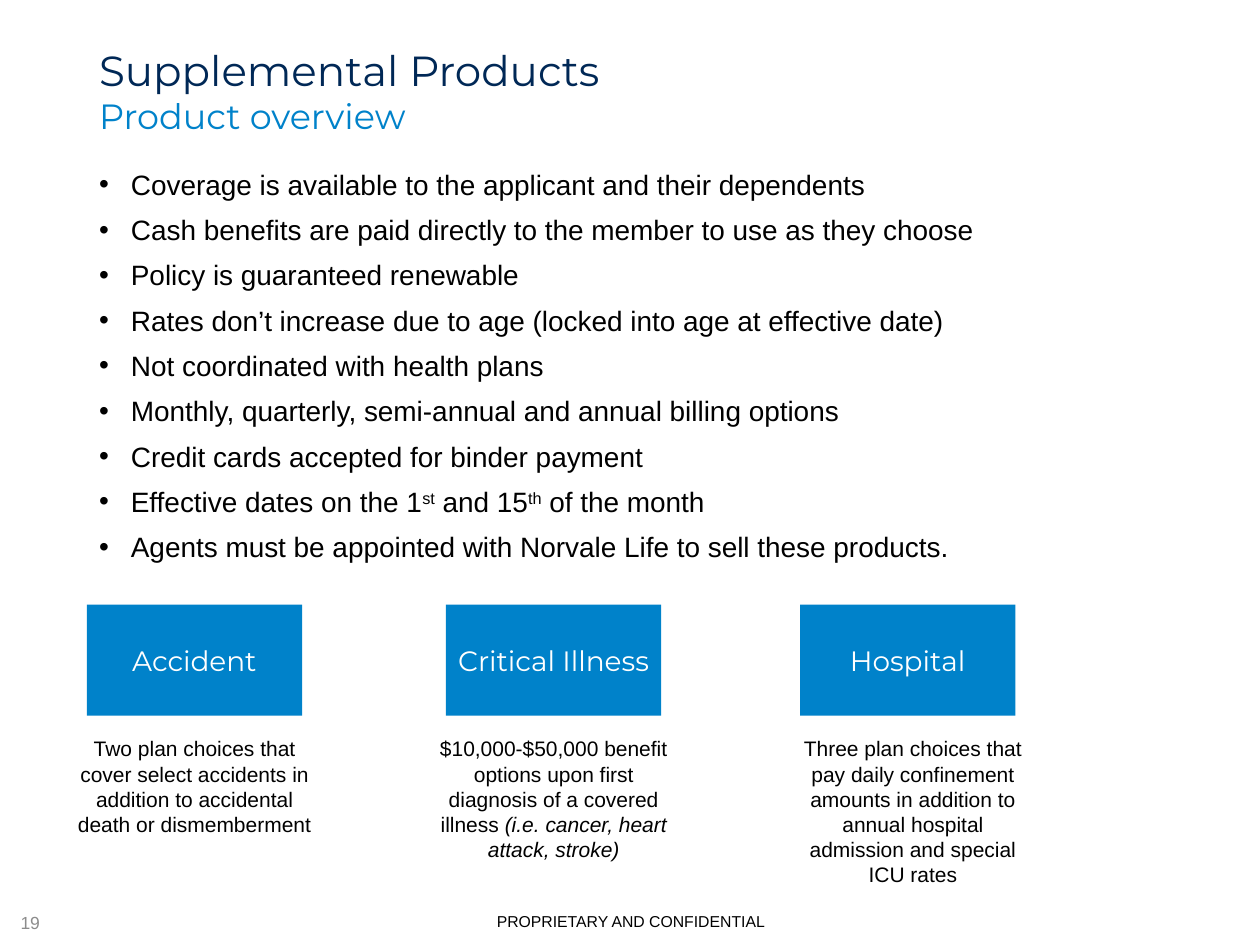
"""Build the Supplemental Products overview slide."""
from lxml.etree import SubElement
from pptx import Presentation
from pptx.dml.color import RGBColor
from pptx.enum.shapes import MSO_SHAPE
from pptx.enum.text import MSO_ANCHOR, PP_ALIGN
from pptx.oxml.ns import qn
from pptx.util import Cm, Pt

NAVY = RGBColor(0x00, 0x28, 0x56)
BLUE = RGBColor(0x00, 0x82, 0xCA)
GRAY = RGBColor(0x8C, 0x8C, 0x8C)
BLACK = RGBColor(0x00, 0x00, 0x00)
WHITE = RGBColor(0xFF, 0xFF, 0xFF)

HEADING_FONT, BODY_FONT = "Montserrat", "Arial"
PLAIN, SUPERSCRIPT, ITALIC = "plain", "superscript", "italic"

BENEFITS = [
    [("Coverage is available to the applicant and their dependents", PLAIN)],
    [("Cash benefits are paid directly to the member to use as they choose", PLAIN)],
    [("Policy is guaranteed renewable", PLAIN)],
    [("Rates don’t increase due to age (locked into age at effective date)", PLAIN)],
    [("Not coordinated with health plans", PLAIN)],
    [("Monthly, quarterly, semi-annual and annual billing options", PLAIN)],
    [("Credit cards accepted for binder payment", PLAIN)],
    [("Effective dates on the 1", PLAIN), ("st", SUPERSCRIPT), (" and 15", PLAIN),
     ("th", SUPERSCRIPT), (" of the month", PLAIN)],
    [("Agents must be appointed with Norvale Life to sell these products.", PLAIN)],
]

PRODUCTS = [
    ("Accident", 1.75, 1.32,
     [("Two plan choices that cover select accidents in addition to accidental "
       "death or dismemberment", PLAIN)]),
    ("Critical Illness", 8.99, 8.56,
     [("$10,000-$50,000 benefit options upon first diagnosis of a covered illness ", PLAIN),
      ("(i.e. cancer, heart attack, stroke)", ITALIC)]),
    ("Hospital", 16.13, 15.8,
     [("Three plan choices that pay daily confinement amounts in addition to "
       "annual hospital admission and special ICU rates", PLAIN)]),
]


def write(paragraph, pieces, font, size, color, align=PP_ALIGN.LEFT):
    paragraph.alignment = align
    paragraph.font.name = font
    paragraph.font.size = Pt(size)
    paragraph.font.color.rgb = color
    for words, style in pieces:
        run = paragraph.add_run()
        run.text = words
        if style == ITALIC:
            run.font.italic = True
        elif style == SUPERSCRIPT:
            run._r.get_or_add_rPr().set("baseline", "30000")


def add_frame(slide, left, top, width, height, anchor=MSO_ANCHOR.TOP):
    frame = slide.shapes.add_textbox(Cm(left), Cm(top), Cm(width), Cm(height)).text_frame
    frame.word_wrap = True
    frame.vertical_anchor = anchor
    return frame


def add_benefits(slide):
    frame = add_frame(slide, 1.75, 3.25, 21.9, 8.64)
    for index, pieces in enumerate(BENEFITS):
        paragraph = frame.add_paragraph() if index else frame.paragraphs[0]
        properties = paragraph._p.get_or_add_pPr()
        properties.set("marL", str(Cm(0.64)))
        properties.set("indent", str(-Cm(0.64)))
        SubElement(properties, qn("a:buFont")).set("typeface", BODY_FONT)
        SubElement(properties, qn("a:buChar")).set("char", "•")
        if index:
            paragraph.space_before = Pt(6.7)
        write(paragraph, pieces, BODY_FONT, 16, BLACK)


def add_product(slide, name, tile_left, summary_left, summary):
    tile = slide.shapes.add_shape(
        MSO_SHAPE.RECTANGLE, Cm(tile_left), Cm(12.19), Cm(4.34), Cm(2.24))
    tile.shadow.inherit = False
    tile.fill.solid()
    tile.fill.fore_color.rgb = BLUE
    tile.line.fill.background()
    label = tile.text_frame
    label.word_wrap = True
    label.vertical_anchor = MSO_ANCHOR.MIDDLE
    label.margin_left = label.margin_right = Cm(0.13)
    write(label.paragraphs[0], [(name, PLAIN)], HEADING_FONT, 16, WHITE, PP_ALIGN.CENTER)
    frame = add_frame(slide, summary_left, 14.71, 5.21, 3.78)
    write(frame.paragraphs[0], summary, BODY_FONT, 12, BLACK, PP_ALIGN.CENTER)


def main():
    deck = Presentation()
    deck.slide_width, deck.slide_height = Cm(25.4), Cm(19.05)
    slide = deck.slides.add_slide(deck.slide_layouts[6])

    footer = add_frame(slide, 7.29, 18.26, 10.85, 0.64)
    write(footer.paragraphs[0], [("PROPRIETARY AND CONFIDENTIAL", PLAIN)],
          BODY_FONT, 9, BLACK, PP_ALIGN.CENTER)
    title = add_frame(slide, 1.75, 1.02, 21.9, 0.76, MSO_ANCHOR.MIDDLE)
    write(title.paragraphs[0], [("Supplemental Products", PLAIN)], HEADING_FONT, 24, NAVY)
    add_benefits(slide)
    subtitle = add_frame(slide, 1.75, 1.78, 21.9, 0.99)
    write(subtitle.paragraphs[0], [("Product overview", PLAIN)], HEADING_FONT, 20, BLUE)
    page_number = add_frame(slide, 0, 18.14, 1.22, 0.91, MSO_ANCHOR.MIDDLE)
    write(page_number.paragraphs[0], [("19", PLAIN)], BODY_FONT, 10, GRAY, PP_ALIGN.CENTER)
    for product in PRODUCTS:
        add_product(slide, *product)

    deck.save("out.pptx")


if __name__ == "__main__":
    main()
